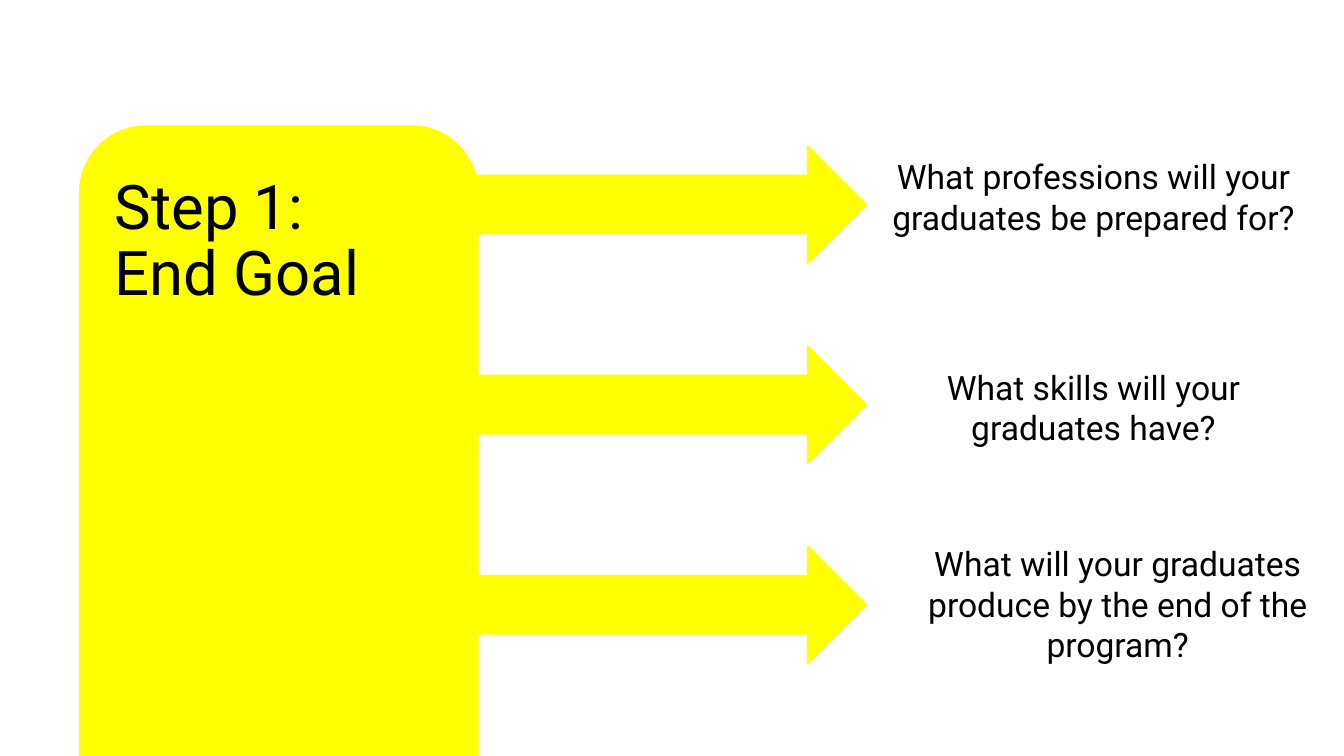
from dataclasses import dataclass

from pptx import Presentation
from pptx.dml.color import RGBColor
from pptx.enum.shapes import MSO_SHAPE as Preset
from pptx.enum.text import MSO_ANCHOR as Anchor, PP_ALIGN as Align
from pptx.shapes.autoshape import Shape
from pptx.slide import Slide
from pptx.util import Inches, Pt

YELLOW = RGBColor(0xFF, 0xFF, 0x00)
BLACK = RGBColor(0x00, 0x00, 0x00)
FONT = "Roboto"

ARROW_TOP = 1.45
ARROW_PITCH = 1.985


@dataclass(frozen=True)
class Box:
    left: float
    top: float
    width: float
    height: float

    def lengths(self) -> tuple[int, ...]:
        return tuple(Inches(v) for v in (self.left, self.top, self.width, self.height))


@dataclass(frozen=True)
class Question:
    wording: str
    box: Box


QUESTIONS = [
    Question("What professions will your graduates be prepared for?", Box(8.6, 1.5, 4.49, 1.31)),
    Question("What skills will your graduates have?", Box(8.6, 3.59, 4.49, 0.91)),
    Question("What will your graduates produce by the end of the program?", Box(8.84, 5.34, 4.49, 1.31)),
]


def add_yellow_shape(slide: Slide, preset: Preset, box: Box) -> Shape:
    shape = slide.shapes.add_shape(preset, *box.lengths())
    shape.shadow.inherit = False
    shape.fill.solid()
    shape.fill.fore_color.rgb = YELLOW
    shape.line.color.rgb = YELLOW
    shape.line.width = Pt(1)
    return shape


def add_text(slide: Slide, wording: str, box: Box, size: int, align: Align,
             anchor: Anchor = Anchor.TOP, line_spacing: float = 1.0) -> None:
    frame = slide.shapes.add_textbox(*box.lengths()).text_frame
    frame.word_wrap = True
    frame.vertical_anchor = anchor
    paragraph = frame.paragraphs[0]
    paragraph.alignment = align
    paragraph.line_spacing = line_spacing
    run = paragraph.add_run()
    run.text = wording
    run.font.name = FONT
    run.font.size = Pt(size)
    run.font.color.rgb = BLACK


def main() -> None:
    deck = Presentation()
    deck.slide_width, deck.slide_height = Inches(13.33), Inches(7.5)
    slide = deck.slides.add_slide(deck.slide_layouts[6])

    # Step panel, running off the bottom edge, with its heading
    add_yellow_shape(slide, Preset.ROUNDED_RECTANGLE, Box(0.79, 1.25, 3.95, 7.51))
    add_text(slide, "Step 1: End Goal", Box(1.04, 1.68, 3.1, 1.45), 44,
             Align.LEFT, Anchor.MIDDLE, 0.9)

    # One arrow from the panel to each question
    for row, question in enumerate(QUESTIONS):
        arrow_box = Box(3.98, ARROW_TOP + row * ARROW_PITCH, 4.61, 1.16)
        add_yellow_shape(slide, Preset.RIGHT_ARROW, arrow_box)
        add_text(slide, question.wording, question.box, 24, Align.CENTER)

    deck.save("out.pptx")


if __name__ == "__main__":
    main()
